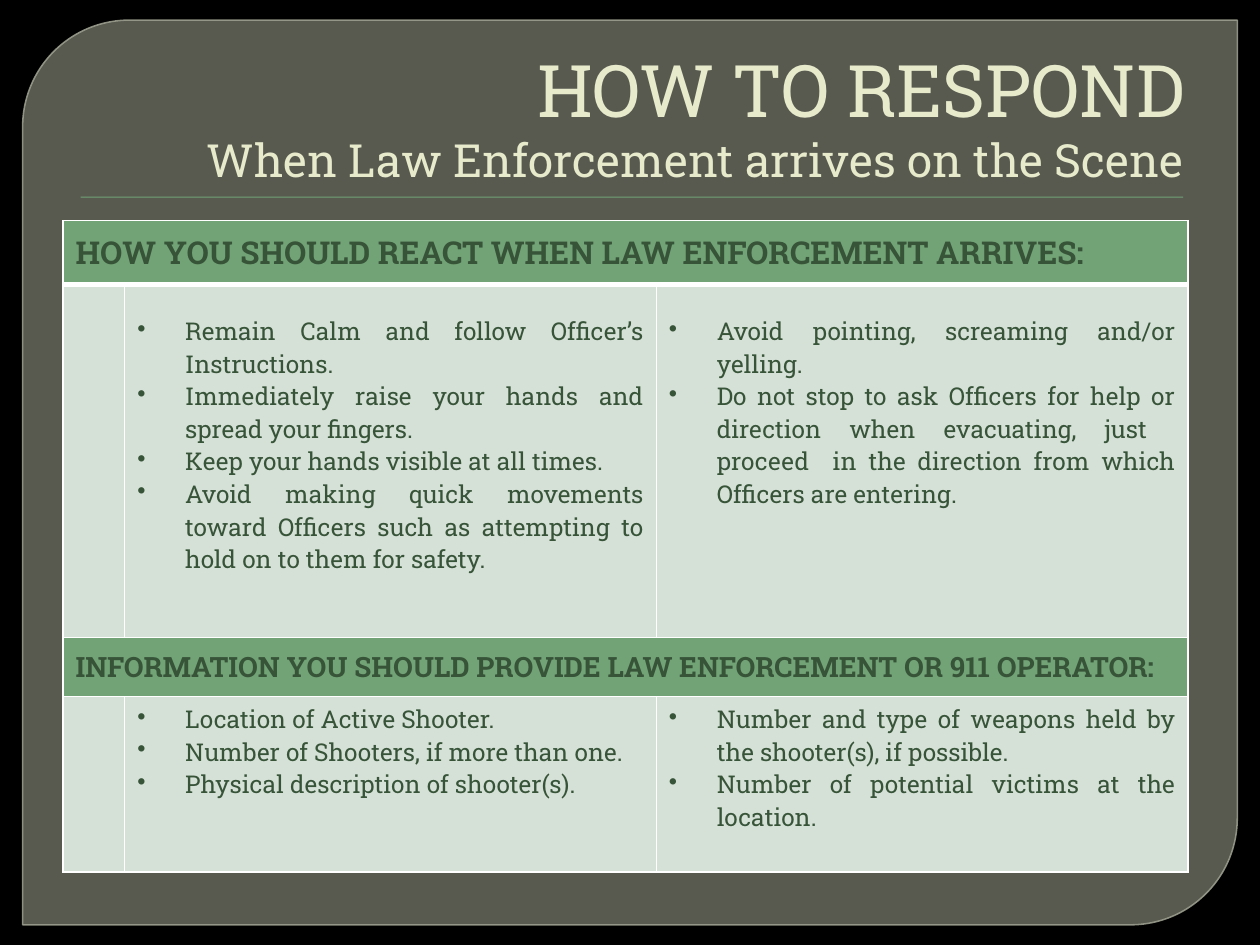
import lxml.etree
import pptx
import pptx.dml.color
import pptx.enum.shapes
import pptx.enum.text
import pptx.oxml.ns
import pptx.util
from dataclasses import dataclass
from pptx.util import Inches

qn = pptx.oxml.ns.qn
Shape = pptx.enum.shapes.MSO_SHAPE
Anchor = pptx.enum.text.MSO_ANCHOR
Align = pptx.enum.text.PP_ALIGN


def rgb(value):
    return pptx.dml.color.RGBColor.from_string(value)


@dataclass(frozen=True)
class Theme:
    font: str = "Roboto Slab"
    background: str = "000000"
    panel: str = "888B7B"
    panel_line: str = "9DA090"
    accent: str = "72A376"
    cell: str = "D5E0D6"
    border: str = "FFFFFF"
    title: str = "E7EACB"
    text: str = "375439"
    title_size: float = 41.4
    subtitle_size: float = 26.1
    body_size: float = 14


class SlideBuilder:
    def __init__(self, deck, theme):
        self.theme = theme
        self.slide = deck.slides.add_slide(deck.slide_layouts[5])
        background = self.slide.background.fill
        background.solid()
        background.fore_color.rgb = rgb(theme.background)

    def set_font(self, font, size, color, bold=False):
        font.name = self.theme.font
        font.size = pptx.util.Pt(size)
        font.color.rgb = rgb(color)
        font.bold = bold

    def set_alpha(self, fill, percent):
        """Make a solid fill partly transparent."""
        color = fill._xPr.find(qn("a:solidFill"))[0]
        lxml.etree.SubElement(color, qn("a:alpha"), val=str(percent * 1000))

    def add_panel(self, left, top, width, height):
        panel = self.slide.shapes.add_shape(
            Shape.ROUND_2_DIAG_RECTANGLE, left, top, width, height)
        panel.adjustments[0] = 0.118
        panel.adjustments[1] = 0
        panel.shadow.inherit = False
        panel.fill.solid()
        panel.fill.fore_color.rgb = rgb(self.theme.panel)
        self.set_alpha(panel.fill, 65)
        panel.line.width = pptx.util.Pt(0.87)
        panel.line.color.rgb = rgb(self.theme.panel_line)
        self.set_alpha(panel.line.fill, 88)

    def add_rule(self, left, top, width, height):
        rule = self.slide.shapes.add_shape(Shape.RECTANGLE, left, top, width, height)
        rule.shadow.inherit = False
        rule.fill.solid()
        rule.fill.fore_color.rgb = rgb(self.theme.accent)
        rule.line.fill.background()

    def add_title(self, heading, subtitle, left, top, width, height):
        box = self.slide.shapes.title
        box.left, box.top, box.width, box.height = left, top, width, height
        frame = box.text_frame
        frame.word_wrap = True
        frame.auto_size = pptx.enum.text.MSO_AUTO_SIZE.NONE
        frame.vertical_anchor = Anchor.BOTTOM
        frame.margin_bottom = Inches(0.02)
        para = frame.paragraphs[0]
        para.alignment = Align.RIGHT
        span = para.add_run()
        span.text = heading
        self.set_font(span.font, self.theme.title_size, self.theme.title)
        para.add_line_break()
        span = para.add_run()
        span.text = subtitle
        self.set_font(span.font, self.theme.subtitle_size, self.theme.title)

    def add_table(self, left, top, columns, rows):
        table = self.slide.shapes.add_table(
            len(rows), len(columns), left, top, sum(columns), sum(rows)).table
        for column, width in zip(table.columns, columns):
            column.width = width
        for row, height in zip(table.rows, rows):
            row.height = height
        return table

    def style_cell(self, cell, color, top_line=1, bottom_line=1):
        properties = cell._tc.get_or_add_tcPr()
        for side, points in zip("LRTB", (1, 1, top_line, bottom_line)):
            line = lxml.etree.SubElement(
                properties, qn("a:ln" + side), w=str(pptx.util.Pt(points)))
            fill = lxml.etree.SubElement(line, qn("a:solidFill"))
            lxml.etree.SubElement(fill, qn("a:srgbClr"), val=self.theme.border)
        cell.fill.solid()
        cell.fill.fore_color.rgb = rgb(color)

    def add_heading_row(self, table, row, text, size, bottom_line=1):
        cells = list(table.rows[row].cells)
        for cell in cells:
            self.style_cell(cell, self.theme.accent, bottom_line=bottom_line)
        cells[0].merge(cells[-1])
        cells[0].vertical_anchor = Anchor.MIDDLE
        para = cells[0].text_frame.paragraphs[0]
        para.text = text
        self.set_font(para.font, size, self.theme.text, bold=True)

    def add_list_row(self, table, row, lists, margin_top, top_line=1):
        """Fill a row with bullet lists, leaving its first cell empty."""
        for cell, items in zip(table.rows[row].cells, [[], *lists]):
            self.style_cell(cell, self.theme.cell, top_line=top_line)
            cell.margin_top = margin_top
            frame = cell.text_frame
            for index, item in enumerate(items):
                para = frame.add_paragraph() if index else frame.paragraphs[0]
                para.text = item
                para.alignment = Align.JUSTIFY
                self.set_font(para.font, self.theme.body_size, self.theme.text)
                self.add_bullet(para)

    def add_bullet(self, para):
        properties = para._p.get_or_add_pPr()
        properties.set("marL", str(Inches(0.38)))
        properties.set("indent", str(-Inches(0.38)))
        bullet = lxml.etree.Element(qn("a:buChar"), char="•")
        properties.find(qn("a:defRPr")).addprevious(bullet)


def main():
    deck = pptx.Presentation()
    deck.slide_width, deck.slide_height = Inches(10), Inches(7.5)
    page = SlideBuilder(deck, Theme())
    page.add_panel(Inches(0.18), Inches(0.16), Inches(9.64), Inches(7.18))
    page.add_rule(Inches(0.64), Inches(1.56), Inches(8.75), Inches(0.01))
    page.add_title("HOW TO RESPOND", "When Law Enforcement arrives on the Scene",
                   Inches(0), Inches(0.29), Inches(9.5), Inches(1.21))
    # The title sits above the panel and rule.
    tree = page.slide.shapes._spTree
    tree.append(page.slide.shapes.title._element)

    table = page.add_table(
        Inches(0.5), Inches(1.75),
        [Inches(width) for width in (0.49, 4.22, 4.22)],
        [Inches(height) for height in (0.51, 2.8, 0.47, 1.39)])
    page.add_heading_row(
        table, 0, "HOW YOU SHOULD REACT WHEN LAW ENFORCEMENT ARRIVES:", 18, bottom_line=3)
    page.add_list_row(table, 1, [
        ["Remain Calm and follow Officer’s Instructions.",
         "Immediately raise your hands and spread your fingers.",
         "Keep your hands visible at all times.",
         "Avoid making quick movements toward Officers such as attempting to "
         "hold on to them for safety."],
        ["Avoid pointing, screaming and/or yelling.",
         "Do not stop to ask Officers for help or direction when evacuating, "
         "just  proceed  in the direction from which Officers are entering."],
    ], Inches(0.24), top_line=3)
    page.add_heading_row(
        table, 2, "INFORMATION YOU SHOULD PROVIDE LAW ENFORCEMENT OR 911 OPERATOR:", 16)
    page.add_list_row(table, 3, [
        ["Location of Active Shooter.",
         "Number of Shooters, if more than one.",
         "Physical description of shooter(s)."],
        ["Number and type of weapons held by the shooter(s), if possible.",
         "Number of potential victims at the location."],
    ], Inches(0.05))
    deck.save("out.pptx")


if __name__ == "__main__":
    main()
